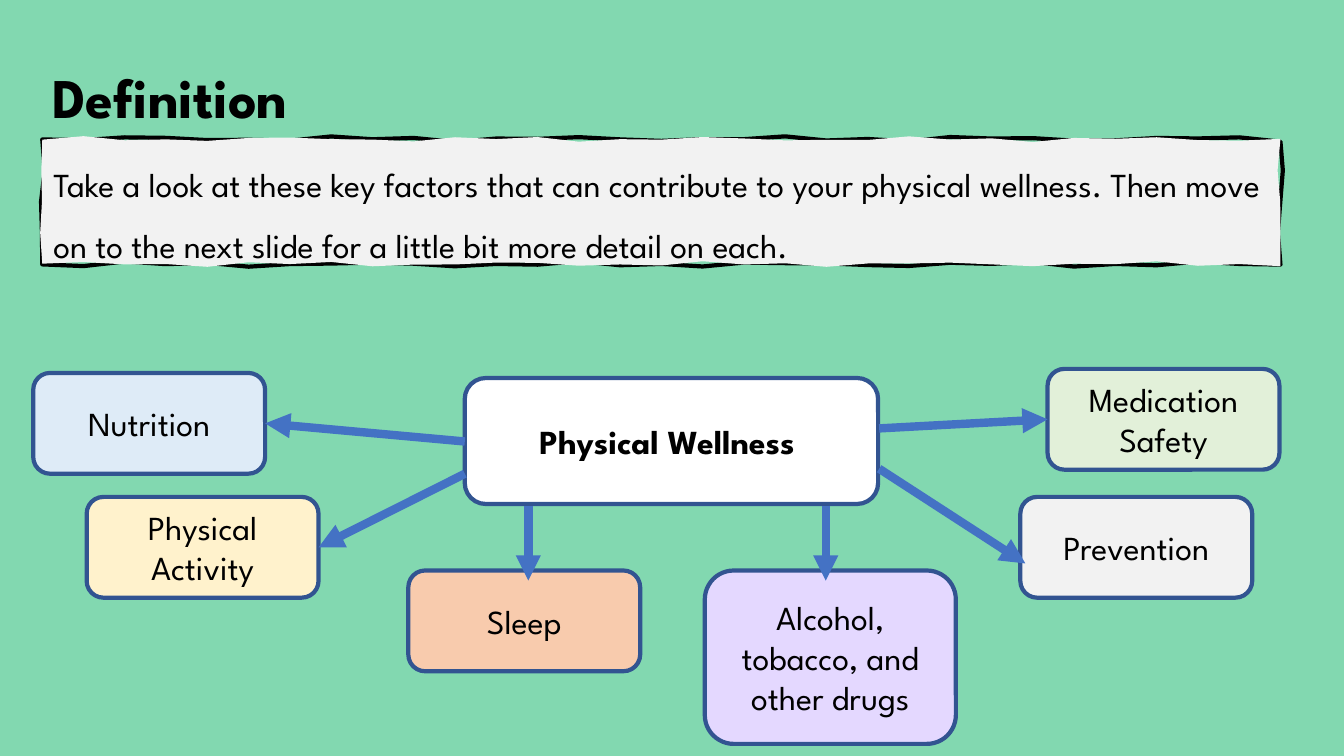
from math import sin

from pptx import Presentation
from pptx.dml.color import RGBColor
from pptx.enum.shapes import MSO_CONNECTOR as Connector, MSO_SHAPE as Preset
from pptx.enum.text import MSO_ANCHOR as Anchor, MSO_AUTO_SIZE as AutoSize, PP_ALIGN as Align
from pptx.oxml.ns import qn
from pptx.util import Inches, Pt
from lxml.etree import SubElement

FONT = "League Spartan"
BLACK = RGBColor(0x00, 0x00, 0x00)
WHITE = RGBColor(0xFF, 0xFF, 0xFF)
MINT = RGBColor(0x82, 0xD8, 0xB0)
PALE_GREY = RGBColor(0xF2, 0xF2, 0xF2)
NAVY = RGBColor(0x32, 0x54, 0x91)
BLUE = RGBColor(0x44, 0x72, 0xC4)
PEACH = RGBColor(0xF8, 0xCB, 0xAD)
PALE_BLUE = RGBColor(0xDE, 0xEB, 0xF7)
PALE_GREEN = RGBColor(0xE2, 0xF0, 0xD9)
CREAM = RGBColor(0xFF, 0xF2, 0xCC)
LILAC = RGBColor(0xE4, 0xD8, 0xFF)

# Content
TITLE = "Definition"
INTRO = ("Take a look at these key factors that can contribute to your physical wellness. "
         "Then move on to the next slide for a little bit more detail on each.")
HUB = "Physical Wellness "
HUB_PLACE = (4.61, 3.75, 4.1, 1.25)
FACTOR_SIZE = (2.3, 1)
FACTORS = [  # text, left and top, size, fill, arrow start, arrow end
    ("Nutrition", (0.33, 3.7), FACTOR_SIZE, PALE_BLUE, (4.61, 4.38), (2.63, 4.2)),
    ("Physical Activity", (0.86, 4.93), FACTOR_SIZE, CREAM, (4.61, 4.7), (3.16, 5.43)),
    ("Sleep", (4.05, 5.66), FACTOR_SIZE, PEACH, (5.24, 5.02), (5.24, 5.76)),
    ("Alcohol, tobacco, and other drugs", (6.99, 5.66), (2.49, 1.72), LILAC,
     (8.19, 5.02), (8.19, 5.76)),
    ("Prevention", (10.12, 4.93), FACTOR_SIZE, PALE_GREY, (8.72, 4.65), (10.17, 5.59)),
    ("Medication Safety", (10.39, 3.66), FACTOR_SIZE, PALE_GREEN, (8.72, 4.25), (10.39, 4.16)),
]
PANEL = (0.42, 1.38, 12.28, 1.24)
UNITS_PER_INCH = 1000  # freeform points are whole numbers


def write(shape, text, size=24, bold=False, align=Align.LEFT, anchor=Anchor.TOP, spacing=1):
    frame = shape.text_frame
    frame.word_wrap = True
    frame.auto_size = AutoSize.NONE
    frame.vertical_anchor = anchor
    para = frame.paragraphs[0]
    para.alignment = align
    para.line_spacing = spacing
    span = para.add_run()
    span.text = text
    span.font.name = FONT
    span.font.size = Pt(size)
    span.font.bold = bold
    span.font.color.rgb = BLACK


def add_box(page, text, place, fill, bold=False):
    box = page.shapes.add_shape(Preset.ROUNDED_RECTANGLE, *map(Inches, place))
    box.shadow.inherit = False
    box.fill.solid()
    box.fill.fore_color.rgb = fill
    box.line.color.rgb = NAVY
    box.line.width = Pt(3)
    write(box, text, bold=bold, align=Align.CENTER, anchor=Anchor.MIDDLE)


def add_arrow(page, start, end):
    arrow = page.shapes.add_connector(Connector.STRAIGHT, *map(Inches, start + end))
    arrow.line.color.rgb = BLUE
    arrow.line.width = Pt(6)
    SubElement(arrow.line._get_or_add_ln(), qn("a:tailEnd"), type="triangle")
    SubElement(arrow._element.spPr, qn("a:effectLst"))


def wavy_outline(phase):
    """Points of a rectangle whose sides waver like a hand-drawn line."""
    left, top, width, height = PANEL
    right, bottom = left + width, top + height

    def waver(distance):
        return 0.015 * (sin(3 * distance + phase) + sin(7 * distance + 2 * phase))

    across = [left + width * step / 30 for step in range(31)]
    down = [top + height * step / 4 for step in range(1, 4)]
    points = [(x, top + waver(x)) for x in across]
    points += [(right + waver(y + 1), y) for y in down]
    points += [(x, bottom + waver(x + 2)) for x in reversed(across)]
    points += [(left + waver(y + 3), y) for y in reversed(down)]
    return [(round(x * UNITS_PER_INCH), round(y * UNITS_PER_INCH)) for x, y in points]


def add_wavy_panel(page):
    """One shape of two contours: a stroked sketch line below a filled area."""
    line_points, fill_points = wavy_outline(0.5), wavy_outline(2.5)
    builder = page.shapes.build_freeform(*line_points[0], scale=Inches(1) / UNITS_PER_INCH)
    builder.add_line_segments(line_points[1:], close=True)
    builder.move_to(*fill_points[0])
    builder.add_line_segments(fill_points[1:], close=True)
    panel = builder.convert_to_shape()
    panel.shadow.inherit = False

    # Give the second contour its own entry, filled and without a line
    contours = panel._element.spPr.find(qn("a:custGeom")).find(qn("a:pathLst"))
    stroked = contours[0]
    filled = SubElement(contours, stroked.tag, dict(stroked.attrib))
    second_start = stroked.findall(qn("a:moveTo"))[1]
    for command in list(stroked)[stroked.index(second_start):]:
        filled.append(command)
    stroked.set("fill", "none")
    filled.set("stroke", "0")

    panel.fill.solid()
    panel.fill.fore_color.rgb = PALE_GREY
    panel.line.color.rgb = BLACK
    panel.line.width = Pt(3)
    frame = panel.text_frame
    frame.margin_left = frame.margin_right = Inches(0.13)
    frame.margin_top = Inches(0.08)
    write(panel, INTRO, spacing=1.5)


def main():
    deck = Presentation()
    deck.slide_width, deck.slide_height = Inches(13.33), Inches(7.5)
    page = deck.slides.add_slide(deck.slide_layouts[5])
    page.background.fill.solid()
    page.background.fill.fore_color.rgb = MINT

    # Title
    title = page.shapes.title
    title.left, title.top, title.width, title.height = map(Inches, (0.42, 0.57, 5.39, 0.77))
    write(title, TITLE, size=40, bold=True)

    # Introduction
    add_wavy_panel(page)

    # Hub, factors and the arrows between them
    add_box(page, HUB, HUB_PLACE, WHITE, bold=True)
    for text, corner, size, fill, start, end in FACTORS:
        add_box(page, text, corner + size, fill)
        add_arrow(page, start, end)

    deck.save("out.pptx")


if __name__ == "__main__":
    main()
